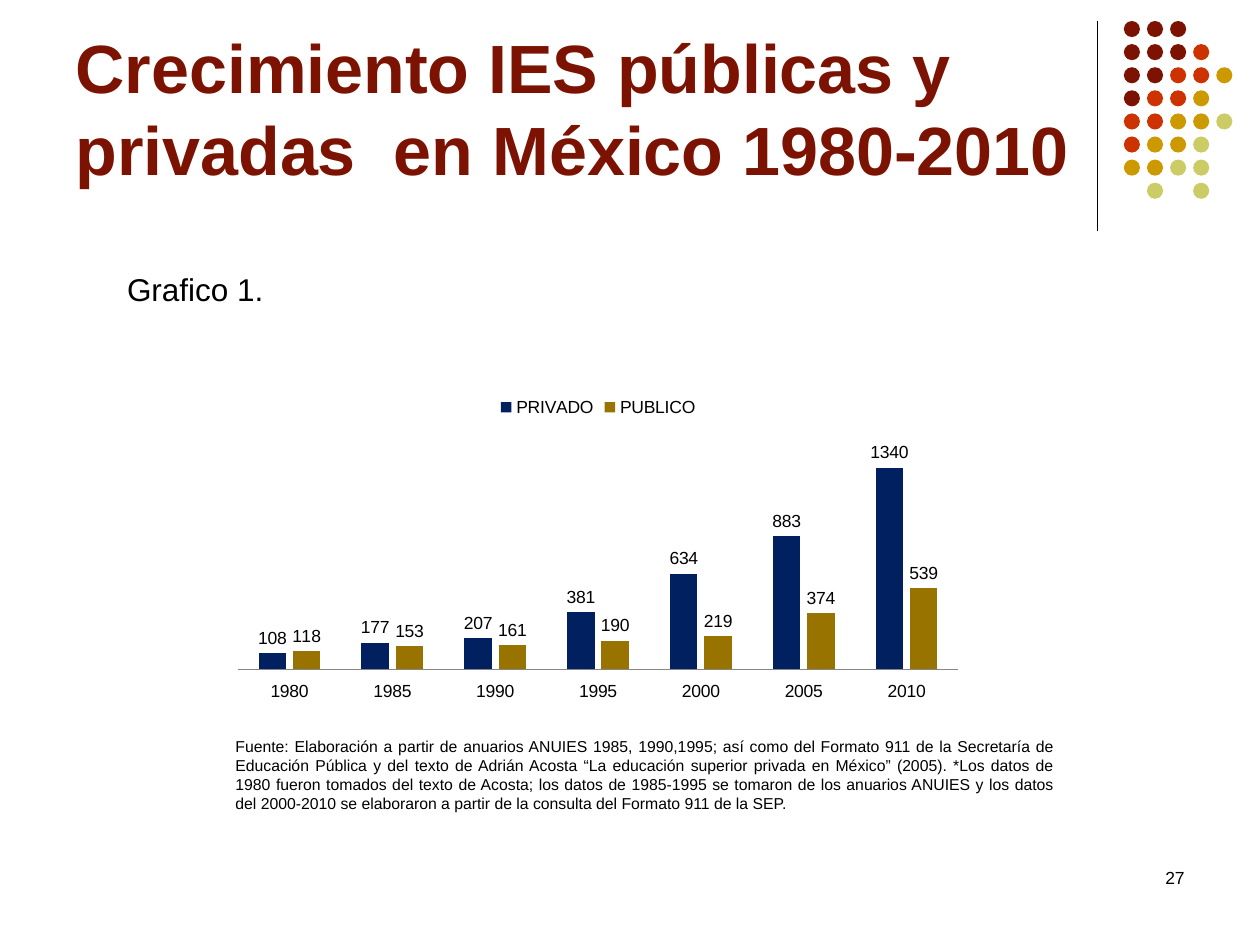
from lxml import etree
from pptx import Presentation
from pptx.chart.data import CategoryChartData
from pptx.dml.color import RGBColor
from pptx.enum.chart import (XL_CHART_TYPE, XL_LABEL_POSITION, XL_LEGEND_POSITION,
                             XL_TICK_LABEL_POSITION, XL_TICK_MARK)
from pptx.enum.shapes import MSO_CONNECTOR, MSO_SHAPE
from pptx.enum.text import MSO_ANCHOR, PP_ALIGN
from pptx.oxml.ns import qn
from pptx.util import Pt

BLACK = RGBColor(0x00, 0x00, 0x00)
GRAY = RGBColor(0x86, 0x86, 0x86)
MAROON = RGBColor(0x7C, 0x13, 0x02)
RED = RGBColor(0xCC, 0x33, 0x00)
GOLD = RGBColor(0xCC, 0x99, 0x00)
LIME = RGBColor(0xCC, 0xCC, 0x66)
NAVY = RGBColor(0x00, 0x20, 0x60)
OCHRE = RGBColor(0x99, 0x73, 0x00)

COLUMNS = XL_CHART_TYPE.COLUMN_CLUSTERED
LEGEND_TOP = XL_LEGEND_POSITION.TOP
LABEL_OUTSIDE = XL_LABEL_POSITION.OUTSIDE_END
NO_TICK = XL_TICK_MARK.NONE
LABELS_LOW = XL_TICK_LABEL_POSITION.LOW
STRAIGHT = MSO_CONNECTOR.STRAIGHT
OVAL = MSO_SHAPE.OVAL
TOP, BOTTOM = MSO_ANCHOR.TOP, MSO_ANCHOR.BOTTOM
LEFT, RIGHT, JUSTIFY = PP_ALIGN.LEFT, PP_ALIGN.RIGHT, PP_ALIGN.JUSTIFY

FONT = "Arial"
DOT_COLORS = {"M": MAROON, "R": RED, "G": GOLD, "L": LIME}
DOT_ROWS = ["MMM", "MMMR", "MMRRG", "MRRG", "RRGGL", "RGGL", "GGLL", ".L.L"]

YEARS = ["1980", "1985", "1990", "1995", "2000", "2005", "2010"]
SERIES = [
    ("PRIVADO", NAVY, (108, 177, 207, 381, 634, 883, 1340)),
    ("PUBLICO", OCHRE, (118, 153, 161, 190, 219, 374, 539)),
]

TITLE = "Crecimiento IES públicas y privadas  en México 1980-2010"
SOURCE = (
    "Fuente: Elaboración a partir de anuarios ANUIES 1985, 1990,1995; así como del "
    "Formato 911 de la Secretaría de Educación Pública y del texto de Adrián Acosta "
    "“La educación superior privada en México” (2005). *Los datos de 1980 fueron "
    "tomados del texto de Acosta; los datos de 1985-1995 se tomaron de los anuarios "
    "ANUIES y los datos del 2000-2010 se elaboraron a partir de la consulta del "
    "Formato 911 de la SEP."
)


def set_font(font, size, color=BLACK, bold=False):
    for name, value in {"name": FONT, "size": Pt(size), "bold": bold}.items():
        setattr(font, name, value)
    font.color.rgb = color


def add_text(page, area, text, size, color=BLACK, bold=False, align=LEFT, anchor=TOP):
    box = page.shapes.add_textbox(*map(Pt, area))
    frame = box.text_frame
    frame.word_wrap = True
    frame.vertical_anchor = anchor
    para = frame.paragraphs[0]
    para.alignment = align
    span = para.add_run()
    span.text = text
    set_font(span.font, size, color, bold)


def add_ornament(page, area):
    """Vertical rule with a grid of dots to its right."""
    left, top, width, height = area
    rule = page.shapes.add_connector(STRAIGHT, Pt(left), Pt(top), Pt(left), Pt(top + height))
    rule.line.color.rgb = BLACK
    rule.line.width = Pt(0.75)
    etree.SubElement(rule._element.spPr, qn("a:effectLst"))

    size, pitch = 9.2, 13.2
    first = left + width - 4 * pitch - size
    for row, codes in enumerate(DOT_ROWS):
        for column, code in enumerate(codes):
            if code not in DOT_COLORS:
                continue
            dot = page.shapes.add_shape(OVAL, Pt(first + column * pitch),
                                        Pt(top + row * pitch), Pt(size), Pt(size))
            dot.shadow.inherit = False
            dot.fill.solid()
            dot.fill.fore_color.rgb = DOT_COLORS[code]
            dot.line.fill.background()


def add_growth_chart(page, area):
    data = CategoryChartData()
    data.categories = YEARS
    for name, _, values in SERIES:
        data.add_series(name, values)
    chart = page.shapes.add_chart(COLUMNS, *map(Pt, area), data).chart
    set_font(chart.font, 10)
    chart.has_title = False

    # Legend
    chart.has_legend = True
    chart.legend.position = LEGEND_TOP
    chart.legend.include_in_layout = False

    # Axes
    chart.value_axis.visible = False
    chart.value_axis.has_major_gridlines = False
    chart.value_axis.minimum_scale = 0
    chart.value_axis.maximum_scale = 1600
    years = chart.category_axis
    years.major_tick_mark = NO_TICK
    years.minor_tick_mark = NO_TICK
    years.tick_label_position = LABELS_LOW
    years.format.line.color.rgb = GRAY

    # Columns and their values
    plot = chart.plots[0]
    plot.gap_width = 150
    plot.overlap = -25
    plot.vary_by_categories = False
    for series, (_, color, _) in zip(plot.series, SERIES):
        series.format.fill.solid()
        series.format.fill.fore_color.rgb = color
        series.data_labels.show_value = True
        series.data_labels.position = LABEL_OUTSIDE


def main():
    deck = Presentation()
    deck.slide_width, deck.slide_height = Pt(720), Pt(540)
    page = deck.slides.add_slide(deck.slide_layouts[6])

    add_ornament(page, (627, 12, 77.2, 120))
    add_text(page, (36, 9.5, 594, 102), TITLE, 39, MAROON, bold=True, anchor=BOTTOM)
    add_growth_chart(page, (127.5, 219, 428.5, 185.5))
    add_text(page, (65.5, 151, 187, 29), "Grafico 1.", 18)
    add_text(page, (127.5, 417.5, 481.5, 94.5), SOURCE, 9, align=JUSTIFY)
    add_text(page, (516, 492, 168, 36), "27", 10, align=RIGHT)

    deck.save("out.pptx")


if __name__ == "__main__":
    main()
